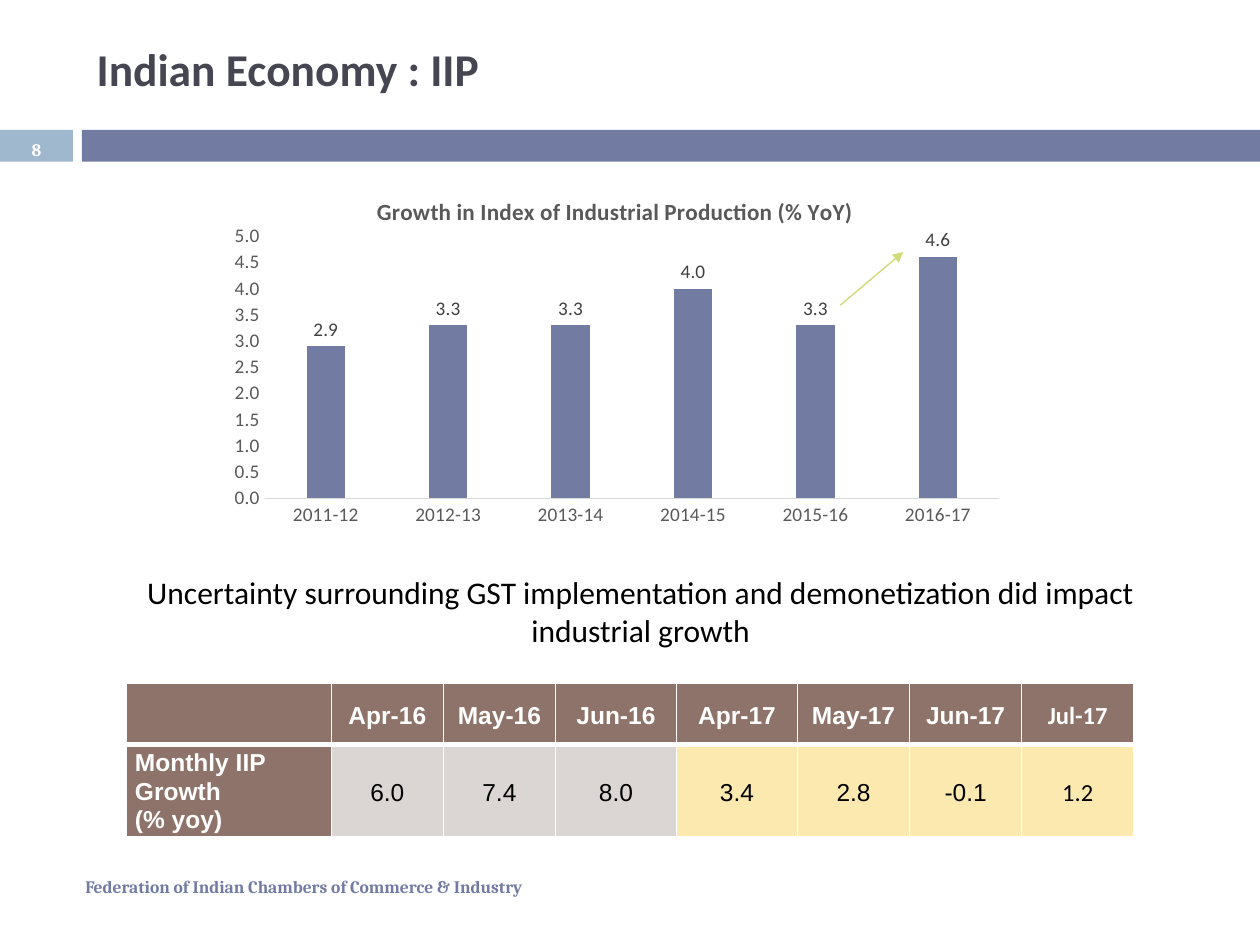
from dataclasses import dataclass

from lxml import etree
from pptx import Presentation
from pptx.chart.data import CategoryChartData
from pptx.dml.color import RGBColor
from pptx.enum.chart import XL_CHART_TYPE, XL_LABEL_POSITION, XL_TICK_MARK
from pptx.enum.shapes import MSO_CONNECTOR, MSO_SHAPE
from pptx.enum.text import MSO_ANCHOR, PP_ALIGN
from pptx.oxml import parse_xml
from pptx.oxml.ns import nsdecls, qn
from pptx.util import Cm, Pt

COLUMN = XL_CHART_TYPE.COLUMN_CLUSTERED
OUTSIDE_END = XL_LABEL_POSITION.OUTSIDE_END
NO_TICK = XL_TICK_MARK.NONE
STRAIGHT = MSO_CONNECTOR.STRAIGHT
RECTANGLE = MSO_SHAPE.RECTANGLE
TOP, MIDDLE = MSO_ANCHOR.TOP, MSO_ANCHOR.MIDDLE
LEFT, CENTER = PP_ALIGN.LEFT, PP_ALIGN.CENTER

WHITE = RGBColor(0xFF, 0xFF, 0xFF)
BLACK = RGBColor(0x00, 0x00, 0x00)
INDIGO = RGBColor(0x72, 0x7C, 0xA3)
PALE_BLUE = RGBColor(0x9F, 0xB8, 0xCD)
SLATE = RGBColor(0x46, 0x46, 0x53)
BROWN = RGBColor(0x8E, 0x73, 0x6A)
WARM_GRAY = RGBColor(0xDB, 0xD5, 0xD4)
CREAM = RGBColor(0xFC, 0xE9, 0xAF)
LIME = RGBColor(0xD2, 0xDA, 0x7A)
AXIS_TEXT = RGBColor(0x59, 0x59, 0x59)
AXIS_LINE = RGBColor(0xD9, 0xD9, 0xD9)
LABEL_TEXT = RGBColor(0x40, 0x40, 0x40)


@dataclass(frozen=True)
class Box:
    left: float
    top: float
    width: float
    height: float

    def lengths(self) -> tuple[Cm, Cm, Cm, Cm]:
        return Cm(self.left), Cm(self.top), Cm(self.width), Cm(self.height)


@dataclass(frozen=True)
class Style:
    size: float
    color: RGBColor
    face: str = "Calibri"
    bold: bool = False


@dataclass(frozen=True)
class Caption:
    text: str
    box: Box
    style: Style
    align: PP_ALIGN = LEFT
    anchor: MSO_ANCHOR = MIDDLE


@dataclass(frozen=True)
class Month:
    name: str
    growth: str
    width: float
    fill: RGBColor
    face: str = "Arial"


BANDS = [
    (Box(0, 2.62, 1.47, 0.64), PALE_BLUE),
    (Box(1.65, 2.62, 23.75, 0.64), INDIGO),
]
CAPTIONS = [
    Caption("Federation of Indian Chambers of Commerce & Industry",
            Box(1.47, 17.37, 16.31, 1.02), Style(10, INDIGO, "Cambria", True)),
    Caption("Indian Economy : IIP", Box(1.7, 0.2, 22.66, 2.34),
            Style(26, SLATE, bold=True)),
    Caption("8", Box(0, 2.67, 1.47, 0.69),
            Style(10, WHITE, "Cambria", True), CENTER),
    Caption("Uncertainty surrounding GST implementation and demonetization "
            "did impact industrial growth",
            Box(2.54, 11.43, 20.75, 1.63), Style(18, BLACK), CENTER, TOP),
]
ANNUAL_GROWTH = {"2011-12": 2.9, "2012-13": 3.3, "2013-14": 3.3,
                 "2014-15": 4.0, "2015-16": 3.3, "2016-17": 4.6}
MONTHS = [
    Month("Apr-16", "6.0", 2.26, WARM_GRAY),
    Month("May-16", "7.4", 2.26, WARM_GRAY),
    Month("Jun-16", "8.0", 2.44, WARM_GRAY),
    Month("Apr-17", "3.4", 2.44, CREAM),
    Month("May-17", "2.8", 2.26, CREAM),
    Month("Jun-17", "-0.1", 2.26, CREAM),
    Month("Jul-17", "1.2", 2.26, CREAM, "Calibri"),
]


def set_font(font, style: Style) -> None:
    font.size, font.name, font.bold = Pt(style.size), style.face, style.bold
    font.color.rgb = style.color


def add_band(slide, box: Box, color: RGBColor) -> None:
    band = slide.shapes.add_shape(RECTANGLE, *box.lengths())
    band.shadow.inherit = False
    band.fill.solid()
    band.fill.fore_color.rgb = color
    band.line.fill.background()


def add_caption(slide, caption: Caption) -> None:
    frame = slide.shapes.add_textbox(*caption.box.lengths()).text_frame
    frame.word_wrap = True
    frame.vertical_anchor = caption.anchor
    frame.text = caption.text
    paragraph = frame.paragraphs[0]
    paragraph.alignment = caption.align
    set_font(paragraph.runs[0].font, caption.style)


def add_growth_chart(slide, box: Box) -> None:
    data = CategoryChartData(number_format="0.0")
    data.categories = list(ANNUAL_GROWTH)
    data.add_series("Series 1", list(ANNUAL_GROWTH.values()))
    chart = slide.shapes.add_chart(COLUMN, *box.lengths(), data).chart
    set_font(chart.font, Style(11, BLACK))
    chart.has_legend = False
    chart.has_title = True
    heading = chart.chart_title.text_frame
    heading.text = "Growth in Index of Industrial Production (% YoY)"
    set_font(heading.paragraphs[0].runs[0].font, Style(13.2, AXIS_TEXT, bold=True))

    for axis in (chart.category_axis, chart.value_axis):
        axis.major_tick_mark = axis.minor_tick_mark = NO_TICK
        axis.has_major_gridlines = False
        set_font(axis.tick_labels.font, Style(11, AXIS_TEXT))
    chart.category_axis.format.line.color.rgb = AXIS_LINE
    chart.category_axis.format.line.width = Pt(0.75)
    values = chart.value_axis
    values.format.line.fill.background()
    values.minimum_scale, values.maximum_scale, values.major_unit = 0, 5, 0.5
    values.tick_labels.number_format = "0.0"
    values.tick_labels.number_format_is_linked = False

    plot = chart.plots[0]
    plot.vary_by_categories = False
    plot.gap_width, plot.overlap = 219, -27
    plot.series[0].format.fill.solid()
    plot.series[0].format.fill.fore_color.rgb = INDIGO
    plot.has_data_labels = True
    labels = plot.data_labels
    labels.show_value = True
    labels.position = OUTSIDE_END
    labels.number_format, labels.number_format_is_linked = "0.0", False
    set_font(labels.font, Style(11, LABEL_TEXT))

    # Fixed inner plot area
    plot_area = plot._element.getparent()
    for old in plot_area.findall(qn("c:layout")):
        plot_area.remove(old)
    plot_area.insert(0, parse_xml(
        f'<c:layout {nsdecls("c")}><c:manualLayout><c:layoutTarget val="inner"/>'
        '<c:xMode val="edge"/><c:yMode val="edge"/><c:x val="0.067"/>'
        '<c:y val="0.161"/><c:w val="0.908"/><c:h val="0.72"/>'
        '</c:manualLayout></c:layout>'))


def add_arrow(slide, start: tuple[float, float], end: tuple[float, float]) -> None:
    arrow = slide.shapes.add_connector(STRAIGHT, *map(Cm, start + end))
    arrow.line.color.rgb = LIME
    arrow.line.width = Pt(0.79)
    etree.SubElement(arrow.line._get_or_add_ln(), qn("a:tailEnd"), type="triangle")
    etree.SubElement(arrow._element.spPr, qn("a:effectLst"))


def fill_cell(cell, text: str, color: RGBColor, style: Style, borders: dict[str, int],
              align: PP_ALIGN = CENTER, spacing: float = 1.15) -> None:
    for side, points in borders.items():
        cell._tc.get_or_add_tcPr().append(parse_xml(
            f'<a:ln{side} {nsdecls("a")} w="{Pt(points)}"><a:solidFill>'
            f'<a:srgbClr val="{WHITE}"/></a:solidFill></a:ln{side}>'))
    cell.fill.solid()
    cell.fill.fore_color.rgb = color
    cell.vertical_anchor = MIDDLE
    cell.margin_left = cell.margin_right = Cm(0.18)
    cell.margin_top = cell.margin_bottom = 0
    paragraph = cell.text_frame.paragraphs[0]
    paragraph.text = text
    paragraph.alignment, paragraph.line_spacing = align, spacing
    for run in paragraph.runs:
        set_font(run.font, style)


def add_monthly_table(slide, box: Box) -> None:
    table = slide.shapes.add_table(2, len(MONTHS) + 1, *box.lengths()).table
    for row, height in zip(table.rows, (1.24, 1.85)):
        row.height = Cm(height)
    header_borders = {"L": 1, "R": 1, "T": 1, "B": 3}
    growth_borders = {"L": 1, "R": 1, "T": 3, "B": 1}
    heading = Style(14, WHITE, "Arial", True)
    table.columns[0].width = Cm(4.14)
    fill_cell(table.cell(0, 0), "", BROWN, heading, header_borders)
    fill_cell(table.cell(1, 0), "Monthly IIP Growth\v(% yoy)", BROWN, heading,
              growth_borders, LEFT, 1.05)
    for column, month in enumerate(MONTHS, start=1):
        table.columns[column].width = Cm(month.width)
        fill_cell(table.cell(0, column), month.name, BROWN,
                  Style(14, WHITE, month.face, True), header_borders)
        fill_cell(table.cell(1, column), month.growth, month.fill,
                  Style(14, BLACK, month.face), growth_borders)


def main() -> None:
    deck = Presentation()
    deck.slide_width, deck.slide_height = Cm(25.4), Cm(19.05)
    slide = deck.slides.add_slide(deck.slide_layouts[6])

    # Header bands, title, page number, message and footer
    for box, color in BANDS:
        add_band(slide, box, color)
    for caption in CAPTIONS:
        add_caption(slide, caption)

    # Monthly figures, annual chart and its rising arrow
    add_monthly_table(slide, Box(2.54, 13.77, 20.32, 3.09))
    add_growth_chart(slide, Box(4.24, 3.58, 16.31, 7.34))
    add_arrow(slide, (16.94, 6.15), (18.21, 5.08))
    deck.save("out.pptx")


if __name__ == "__main__":
    main()
